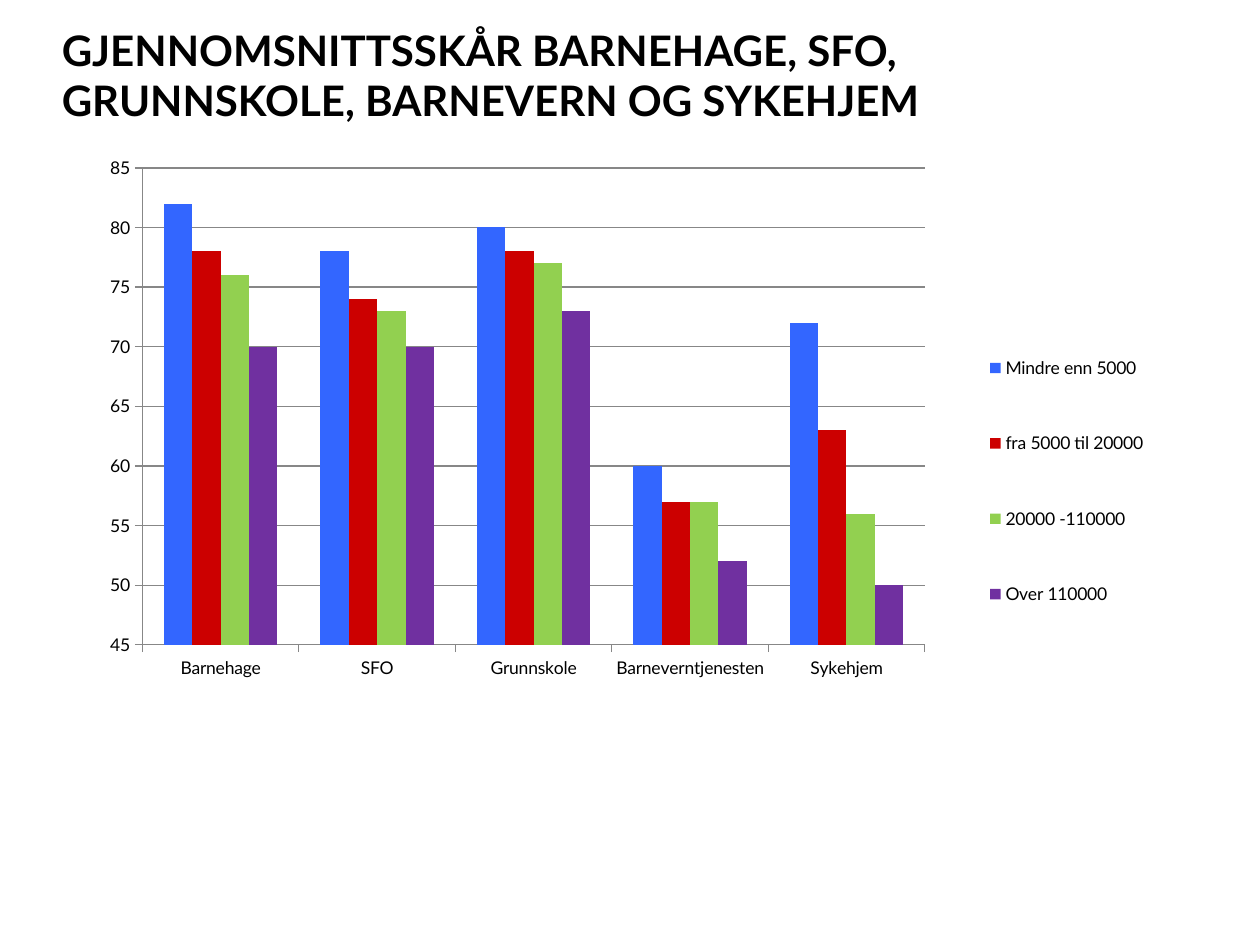
from lxml import etree
from pptx import Presentation
from pptx.chart.data import CategoryChartData
from pptx.dml.color import RGBColor
from pptx.enum.chart import XL_CHART_TYPE, XL_LEGEND_POSITION, XL_TICK_MARK
from pptx.enum.text import MSO_ANCHOR, MSO_AUTO_SIZE, PP_ALIGN
from pptx.oxml.ns import qn
from pptx.util import Inches, Pt

COLORS = {
    "text": "000000",
    "grid": "878787",
    "Mindre enn 5000": "3366FF",
    "fra 5000 til 20000": "CC0000",
    "20000 -110000": "92D050",
    "Over 110000": "7030A0",
}
SERVICES = ["Barnehage", "SFO", "Grunnskole", "Barneverntjenesten", "Sykehjem"]
SCORES = {
    "Mindre enn 5000": [82, 78, 80, 60, 72],
    "fra 5000 til 20000": [78, 74, 78, 57, 63],
    "20000 -110000": [76, 73, 77, 57, 56],
    "Over 110000": [70, 70, 73, 52, 50],
}


def set_all(target, values):
    for name, value in values.items():
        setattr(target, name, value)


def manual_layout(parent, box, inner=False):
    """Place a chart part by fractions of the chart area."""
    layout = parent.find(qn("c:layout"))
    if layout is None:
        layout = etree.Element(qn("c:layout"))
        position = 1 if parent.find(qn("c:legendPos")) is not None else 0
        parent.insert(position, layout)
    for child in list(layout):
        layout.remove(child)
    manual = etree.SubElement(layout, qn("c:manualLayout"))
    settings = [("layoutTarget", "inner")] if inner else []
    settings += [("xMode", "edge"), ("yMode", "edge"), *zip("xywh", box)]
    for tag, value in settings:
        etree.SubElement(manual, qn(f"c:{tag}")).set("val", str(value))


class SlideBuilder:
    font_name = "Lato"

    def __init__(self, presentation):
        self.slide = presentation.slides.add_slide(presentation.slide_layouts[5])

    def color(self, name):
        return RGBColor.from_string(COLORS[name])

    def style_font(self, font, size, bold=False):
        set_all(font, {"name": self.font_name, "size": Pt(size), "bold": bold})
        font.color.rgb = self.color("text")

    def title(self, text, left, top, width, height):
        shape = self.slide.shapes.title
        set_all(shape, {"left": Inches(left), "top": Inches(top),
                        "width": Inches(width), "height": Inches(height)})
        frame = shape.text_frame
        frame.text = text
        set_all(frame, {"word_wrap": True, "auto_size": MSO_AUTO_SIZE.NONE,
                        "vertical_anchor": MSO_ANCHOR.MIDDLE})
        paragraph = frame.paragraphs[0]
        paragraph.alignment = PP_ALIGN.LEFT
        self.style_font(paragraph.runs[0].font, 24, bold=True)

    def axis_line(self, line):
        line.color.rgb = self.color("grid")
        line.width = Pt(0.75)

    def column_chart(self, categories, scores, left, top, width, height):
        data = CategoryChartData(number_format="General")
        data.categories = categories
        for name, values in scores.items():
            data.add_series(name, values)
        chart = self.slide.shapes.add_chart(
            XL_CHART_TYPE.COLUMN_CLUSTERED, Inches(left), Inches(top),
            Inches(width), Inches(height), data).chart
        set_all(chart, {"has_title": False, "has_legend": True})
        self.style_font(chart.font, 10)

        # Columns
        plot = chart.plots[0]
        set_all(plot, {"gap_width": 150, "overlap": 0, "vary_by_categories": False})
        for series in plot.series:
            series.format.fill.solid()
            series.format.fill.fore_color.rgb = self.color(series.name)

        # Axes
        value_axis = chart.value_axis
        set_all(value_axis, {"minimum_scale": 45, "maximum_scale": 85,
                             "major_unit": 5, "has_major_gridlines": True})
        self.axis_line(value_axis.major_gridlines.format.line)
        for axis in (chart.category_axis, value_axis):
            set_all(axis, {"major_tick_mark": XL_TICK_MARK.OUTSIDE,
                           "minor_tick_mark": XL_TICK_MARK.NONE})
            self.axis_line(axis.format.line)

        # Legend and plot area
        set_all(chart.legend, {"position": XL_LEGEND_POSITION.RIGHT,
                               "include_in_layout": False})
        chart_element = chart.element.find(qn("c:chart"))
        manual_layout(chart_element.find(qn("c:legend")), (0.8, 0.24, 0.17, 0.5))
        manual_layout(chart_element.find(qn("c:plotArea")),
                      (0.07, 0.05, 0.69, 0.67), inner=True)


def main():
    presentation = Presentation()
    set_all(presentation, {"slide_width": Inches(10), "slide_height": Inches(7.5)})
    builder = SlideBuilder(presentation)
    builder.title("GJENNOMSNITTSSKÅR BARNEHAGE, SFO, GRUNNSKOLE, BARNEVERN OG SYKEHJEM",
                  0.39, 0.14, 9, 0.91)
    builder.column_chart(SERVICES, SCORES, 0.5, 1.05, 9, 5.65)
    presentation.save("out.pptx")


if __name__ == "__main__":
    main()
